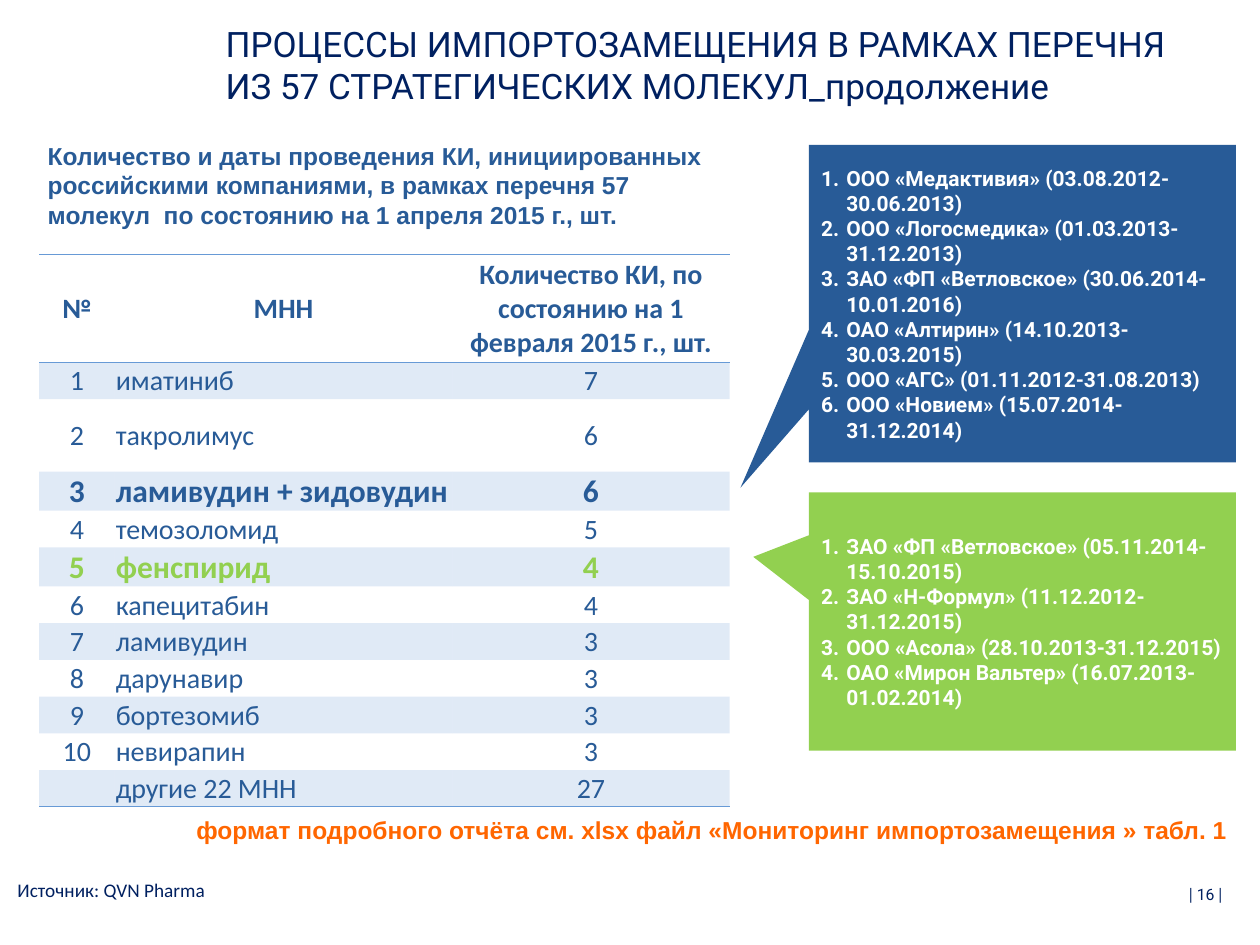
from dataclasses import dataclass

from lxml.etree import SubElement
from pptx import Presentation
from pptx.dml.color import RGBColor
from pptx.enum.shapes import MSO_SHAPE
from pptx.enum.text import MSO_ANCHOR, MSO_AUTO_SIZE, PP_ALIGN
from pptx.oxml import parse_xml
from pptx.oxml.ns import nsdecls, qn
from pptx.util import Pt

COLORS = {
    "navy": "002060",
    "blue": "285B97",
    "rule": "679AD6",
    "green": "92D050",
    "orange": "FF6600",
    "white": "FFFFFF",
}
NO_TABLE_STYLE = "{2D5ABB26-0587-4C30-8999-92F81FD0307C}"


@dataclass(frozen=True)
class Box:
    left: float
    top: float
    width: float
    height: float

    def lengths(self) -> tuple:
        return Pt(self.left), Pt(self.top), Pt(self.width), Pt(self.height)


@dataclass(frozen=True)
class Style:
    font: str
    size: float
    color: str
    bold: bool = False


@dataclass(frozen=True)
class Label:
    box: Box
    runs: tuple
    align: PP_ALIGN = PP_ALIGN.LEFT


@dataclass(frozen=True)
class Callout:
    box: Box
    pointer: tuple
    color: str
    trials: tuple


@dataclass(frozen=True)
class Molecule:
    number: str
    name: str
    trials: str
    style: Style
    height: float = 21


PLAIN = Style("Calibri", 16, "blue")
HEADER = Style("Calibri", 16, "blue", True)
BLUE_ROW = Style("Calibri", 18, "blue", True)
GREEN_ROW = Style("Calibri", 18, "green", True)
CALLOUT_TEXT = Style("Roboto", 12, "white", True)
PAGE_MARK = Style("Lato", 9, "navy")

TITLE_BOX = Box(121.7, 9.4, 581, 41.8)
TITLE = "ПРОЦЕССЫ ИМПОРТОЗАМЕЩЕНИЯ В РАМКАХ ПЕРЕЧНЯ ИЗ 57 СТРАТЕГИЧЕСКИХ МОЛЕКУЛ_продолжение"

LABELS = (
    Label(Box(620.6, 501.8, 85, 28.8),
          (("| ", PAGE_MARK), ("16", Style("Roboto", 9, "navy")), (" |", PAGE_MARK)),
          PP_ALIGN.RIGHT),
    Label(Box(2.9, 498.2, 586.8, 20.9),
          (("Источник: QVN Pharma", Style("Calibri", 11, "navy")),)),
    Label(Box(20.2, 77, 388.8, 58.3),
          (("Количество и даты проведения КИ, инициированных российскими компаниями, "
            "в рамках перечня 57 молекул  по состоянию на 1 апреля 2015 г., шт.",
            Style("Arial", 14, "blue", True)),)),
    Label(Box(105.1, 462.2, 612, 24.5),
          (("формат подробного отчёта см. xlsx файл «Мониторинг импортозамещения » табл. 1",
            Style("Arial", 14, "orange", True)),)),
)

TABLE_BOX = Box(22.3, 145.4, 394.6, 316.8)
COLUMN_WIDTHS = (43.2, 193, 158.4)
MOLECULES = (
    Molecule("№", "МНН", "Количество КИ, по состоянию на 1 февраля 2015 г., шт.", HEADER, 61.7),
    Molecule("1", "иматиниб", "7", PLAIN),
    Molecule("2", "такролимус", "6", PLAIN, 41.5),
    Molecule("3", "ламивудин + зидовудин", "6", BLUE_ROW),
    Molecule("4", "темозоломид", "5", PLAIN),
    Molecule("5", "фенспирид", "4", GREEN_ROW),
    Molecule("6", "капецитабин", "4", PLAIN),
    Molecule("7", "ламивудин", "3", PLAIN),
    Molecule("8", "дарунавир", "3", PLAIN),
    Molecule("9", "бортезомиб", "3", PLAIN),
    Molecule("10", "невирапин", "3", PLAIN),
    Molecule("", "другие 22 МНН", "27", PLAIN),
)

CALLOUTS = (
    Callout(Box(462.2, 82.8, 244, 181.4), (-0.66, 0.58), "blue", (
        "ООО «Медактивия» (03.08.2012-30.06.2013)",
        "ООО «Логосмедика» (01.03.2013-31.12.2013)",
        "ЗАО «ФП «Ветловское» (30.06.2014-10.01.2016)",
        "ОАО «Алтирин» (14.10.2013-30.03.2015)",
        "ООО «АГС» (01.11.2012-31.08.2013)",
        "ООО «Новием» (15.07.2014-31.12.2014)",
    )),
    Callout(Box(462.2, 281.3, 244, 147.6), (-0.63, -0.25), "green", (
        "ЗАО «ФП «Ветловское» (05.11.2014-15.10.2015)",
        "ЗАО «Н-Формул» (11.12.2012-31.12.2015)",
        "ООО «Асола» (28.10.2013-31.12.2015)",
        "ОАО «Мирон Вальтер» (16.07.2013-01.02.2014)",
    )),
)


def rgb(name: str) -> RGBColor:
    return RGBColor.from_string(COLORS[name])


def add_run(paragraph, text: str, style: Style) -> None:
    run = paragraph.add_run()
    run.text = text
    run.font.name = style.font
    run.font.size = Pt(style.size)
    run.font.bold = style.bold
    run.font.color.rgb = rgb(style.color)


def place_title(title) -> None:
    title.left, title.top, title.width, title.height = TITLE_BOX.lengths()
    frame = title.text_frame
    frame.word_wrap = True
    frame.auto_size = MSO_AUTO_SIZE.NONE
    frame.vertical_anchor = MSO_ANCHOR.TOP
    paragraph = frame.paragraphs[0]
    paragraph.alignment = PP_ALIGN.LEFT
    add_run(paragraph, TITLE, Style("Roboto", 20, "navy"))


def add_label(slide, label: Label) -> None:
    frame = slide.shapes.add_textbox(*label.box.lengths()).text_frame
    frame.word_wrap = True
    paragraph = frame.paragraphs[0]
    paragraph.alignment = label.align
    for text, style in label.runs:
        add_run(paragraph, text, style)


def fill_band(cell) -> None:
    """Tint a cell with the rule colour at 20 % opacity."""
    cell.fill.solid()
    cell.fill.fore_color.rgb = rgb("rule")
    color = cell._tc.tcPr.find(".//" + qn("a:srgbClr"))
    SubElement(color, qn("a:alpha"), val="20000")


def add_rules(cell, sides: tuple) -> None:
    for index, side in enumerate(sides):
        line = parse_xml(
            f'<a:{side} {nsdecls("a")} w="{Pt(1)}"><a:solidFill>'
            f'<a:srgbClr val="{COLORS["rule"]}"/></a:solidFill></a:{side}>')
        cell._tc.get_or_add_tcPr().insert(index, line)


def fill_cell(cell, text: str, style: Style, align: PP_ALIGN) -> None:
    cell.margin_left = cell.margin_right = cell.margin_top = Pt(0.7)
    cell.margin_bottom = Pt(0)
    cell.vertical_anchor = MSO_ANCHOR.MIDDLE
    paragraph = cell.text_frame.paragraphs[0]
    paragraph.alignment = align
    if text:
        add_run(paragraph, text, style)
    else:
        SubElement(paragraph._p, qn("a:endParaRPr"), sz=str(style.size * 100))


def add_molecule_table(slide) -> None:
    table = slide.shapes.add_table(
        len(MOLECULES), len(COLUMN_WIDTHS), *TABLE_BOX.lengths()).table
    table.first_row = table.horz_banding = False
    table._tbl.tblPr.find(qn("a:tableStyleId")).text = NO_TABLE_STYLE
    for column, width in zip(table.columns, COLUMN_WIDTHS):
        column.width = Pt(width)
    last = len(MOLECULES) - 1
    for row, molecule in enumerate(MOLECULES):
        table.rows[row].height = Pt(molecule.height)
        for column, text in enumerate((molecule.number, molecule.name, molecule.trials)):
            cell = table.cell(row, column)
            is_name = column == 1 and row > 0
            fill_cell(cell, text, molecule.style, PP_ALIGN.LEFT if is_name else PP_ALIGN.CENTER)
            if row % 2:
                fill_band(cell)
            else:
                cell.fill.background()
            if row == 0:
                add_rules(cell, ("lnT", "lnB"))
            elif row == last:
                add_rules(cell, ("lnB",))


def add_callout(slide, callout: Callout) -> None:
    shape = slide.shapes.add_shape(MSO_SHAPE.RECTANGULAR_CALLOUT, *callout.box.lengths())
    shape.adjustments[0], shape.adjustments[1] = callout.pointer
    shape.shadow.inherit = False
    shape.fill.solid()
    shape.fill.fore_color.rgb = rgb(callout.color)
    shape.line.fill.background()
    frame = shape.text_frame
    frame.word_wrap = True
    frame.vertical_anchor = MSO_ANCHOR.MIDDLE
    for index, trial in enumerate(callout.trials):
        paragraph = frame.add_paragraph() if index else frame.paragraphs[0]
        paragraph.alignment = PP_ALIGN.LEFT
        properties = paragraph._p.get_or_add_pPr()
        properties.set("marL", str(Pt(14.4)))
        properties.set("indent", str(-Pt(14.4)))
        SubElement(properties, qn("a:buFont"), typeface="+mj-lt")
        SubElement(properties, qn("a:buAutoNum"), type="arabicPeriod")
        add_run(paragraph, trial, CALLOUT_TEXT)


def main() -> None:
    deck = Presentation()
    deck.slide_width, deck.slide_height = Pt(720), Pt(540)
    slide = deck.slides.add_slide(deck.slide_layouts[5])
    place_title(slide.shapes.title)
    for label in LABELS:
        add_label(slide, label)
    add_molecule_table(slide)
    for callout in CALLOUTS:
        add_callout(slide, callout)
    deck.save("out.pptx")


if __name__ == "__main__":
    main()
